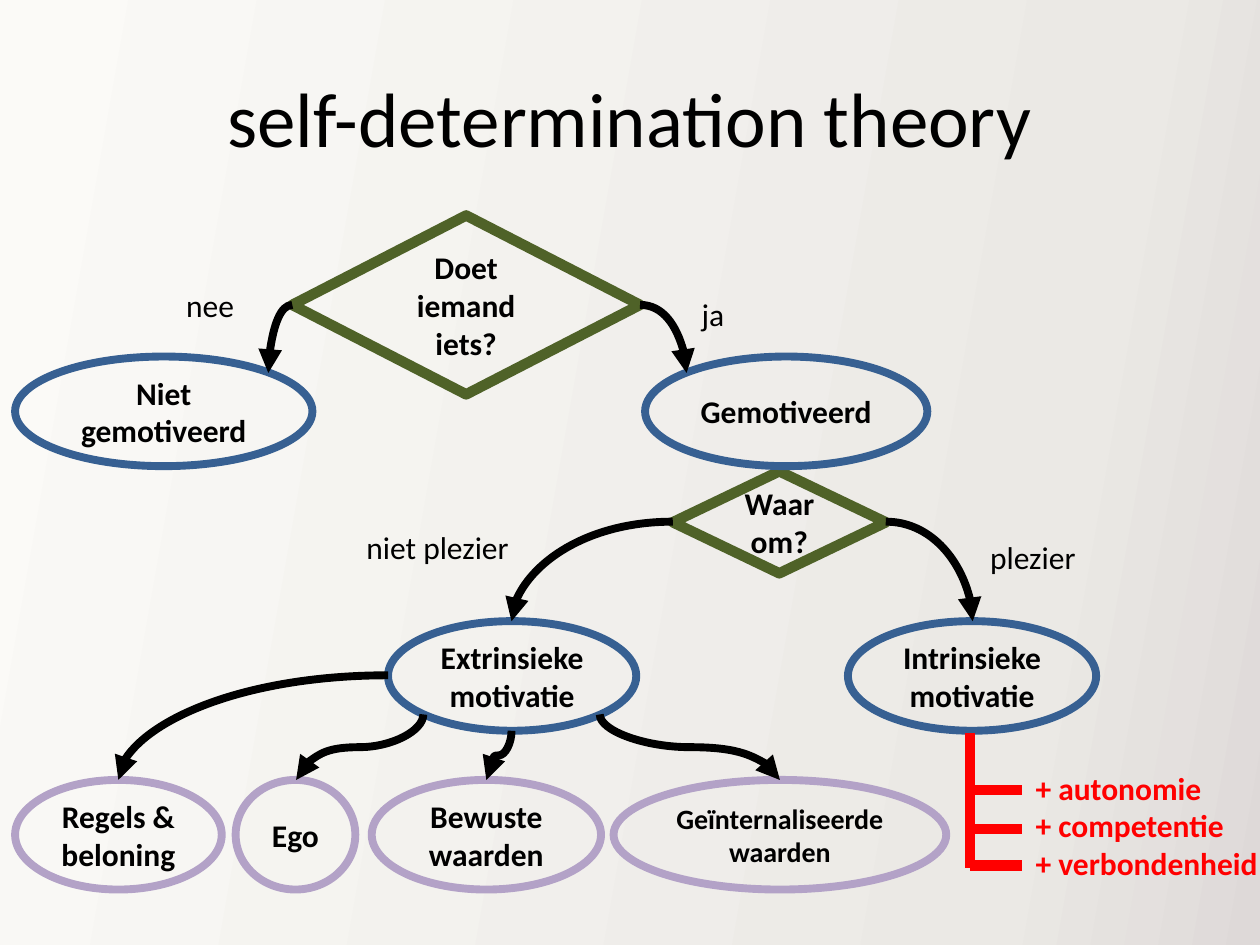
from lxml import etree
from pptx import Presentation
from pptx import util as u
from pptx.dml.color import RGBColor
from pptx.enum import shapes, text
from pptx.oxml import parse_xml
from pptx.oxml.ns import nsdecls, qn

BLACK, RED = "000000", "FF0000"
GREEN, BLUE, LILAC = "4F6228", "376092", "B3A2C7"
KIND = shapes.MSO_SHAPE
LINK = shapes.MSO_CONNECTOR


def paint(code):
    return RGBColor.from_string(code)


def write(frame, words, size=18, bold=False, color=BLACK,
          align=text.PP_ALIGN.LEFT, anchor=text.MSO_ANCHOR.TOP):
    frame.word_wrap = True
    frame.vertical_anchor = anchor
    frame.text = words
    for para in frame.paragraphs:
        para.alignment = align
        font = para.runs[0].font
        font.name, font.size, font.bold = "Calibri", u.Pt(size), bold
        font.color.rgb = paint(color)


class Chart:
    """Flow chart style and the slide it is drawn on."""
    centre = dict(align=text.PP_ALIGN.CENTER, anchor=text.MSO_ANCHOR.MIDDLE)

    def __init__(self, slide):
        self.items = slide.shapes

    def back(self, stops, angle):
        box = self.items.add_shape(KIND.RECTANGLE, 0, 0, u.Inches(10), u.Inches(7.5))
        box.shadow.inherit = False
        box.line.fill.background()
        marks = "".join(f'<a:gs pos="{pos * 1000}"><a:srgbClr val="{code}"/></a:gs>'
                        for pos, code in stops)
        grad = parse_xml(f'<a:gradFill {nsdecls("a")} rotWithShape="1"><a:gsLst>{marks}'
                         f'</a:gsLst><a:lin ang="{angle * 60000}" scaled="0"/></a:gradFill>')
        box._element.spPr.find(qn("a:prstGeom")).addnext(grad)

    def label(self, words, x, y, w, h, **form):
        box = self.items.add_textbox(*map(u.Inches, (x, y, w, h)))
        write(box.text_frame, words, **form)

    def node(self, kind, words, x, y, w, h, color, width, size=18):
        box = self.items.add_shape(kind, *map(u.Inches, (x, y, w, h)))
        box.shadow.inherit = False
        box.fill.background()
        box.line.color.rgb = paint(color)
        box.line.width = u.Pt(width)
        write(box.text_frame, words, size=size, bold=True, **self.centre)

    def ask(self, words, *place):
        self.node(KIND.DIAMOND, words, *place, GREEN, 6)

    def oval(self, words, x, y, w, color=BLUE, size=18):
        self.node(KIND.OVAL, words, x, y, w, 0.87, color, 4.5, size)

    def line(self, x1, y1, x2, y2, kind=LINK.STRAIGHT, color=RED, width=6):
        link = self.items.add_connector(kind, *map(u.Inches, (x1, y1, x2, y2)))
        link.line.color.rgb = paint(color)
        link.line.width = u.Pt(width)
        etree.SubElement(link._element.spPr, qn("a:effectLst"))
        return link

    def curve(self, *ends):
        link = self.line(*ends, kind=LINK.CURVE, color=BLACK, width=4.5)
        etree.SubElement(link.line._get_or_add_ln(), qn("a:tailEnd"), type="triangle")
        return link._element.spPr

    def bend(self, *ends):
        """Quarter curve that leaves sideways and arrives from above."""
        self.curve(*ends).find(qn("a:prstGeom")).set("prst", "curvedConnector2")

    def wave(self, x1, y1, x2, y2):
        """S-curve that leaves and arrives vertically: a turned connector."""
        mid, level = (x1 + x2) / 2, (y1 + y2) / 2
        long, wide = (y2 - y1) / 2, abs(x2 - x1) / 2
        side = 1 if x2 < x1 else -1
        props = self.curve(mid - side * long, level - wide,
                           mid + side * long, level + wide)
        turn = 90 if side > 0 else 270
        props.find(qn("a:xfrm")).set("rot", str(turn * 60000))


def main():
    deck = Presentation()
    deck.slide_width, deck.slide_height = u.Inches(10), u.Inches(7.5)
    chart = Chart(deck.slides.add_slide(deck.slide_layouts[6]))

    # Background and title
    chart.back([(0, "FBFAF7"), (81, "EBE9E5"), (100, "DED9D8")], 10)
    chart.label("self-determination theory", 0.5, 0.3, 9, 1.25, size=44, **chart.centre)

    # Questions and states
    chart.ask("Waarom?", 5.34, 3.74, 1.69, 0.81)
    chart.oval("Niet gemotiveerd", 0.12, 2.83, 2.36)
    chart.oval("Gemotiveerd", 5.12, 2.83, 2.24)
    chart.ask("Doet iemand iets?", 2.32, 1.71, 2.76, 1.42)
    chart.oval("Extrinsieke motivatie", 3.08, 4.93, 1.97)
    chart.oval("Intrinsieke motivatie", 6.73, 4.93, 1.97)

    # Kinds of extrinsic motivation
    for words, x, w, size in [("Regels & beloning", 0.12, 1.64, 18),
                              ("Ego", 1.87, 0.95, 18),
                              ("Bewuste waarden", 2.95, 1.82, 18),
                              ("Geïnternaliseerde waarden", 4.87, 2.64, 16)]:
        chart.oval(words, x, 6.19, w, LILAC, size)

    # Arrows
    for ends in [(2.32, 2.42, 2.13, 2.96), (5.08, 2.42, 5.45, 2.96),
                 (5.34, 4.14, 4.06, 4.93), (7.03, 4.14, 7.72, 4.93),
                 (3.08, 5.36, 0.94, 6.19)]:
        chart.bend(*ends)
    for x1, y1, x2 in [(3.36, 5.67, 2.35), (4.06, 5.8, 3.86), (4.76, 5.67, 6.19)]:
        chart.wave(x1, y1, x2, 6.19)

    # Answers beside the arrows
    for words, x, y, w in [("nee", 1.38, 2.22, 0.64), ("ja", 5.47, 2.29, 0.89),
                           ("niet plezier", 2.81, 4.14, 1.48),
                           ("plezier", 7.76, 4.22, 1.48)]:
        chart.label(words, x, y, w, 0.4)

    # Needs behind intrinsic motivation
    chart.label("+ autonomie\n+ competentie\n+ verbondenheid",
                8.12, 6.05, 2.08, 1.01, bold=True, color=RED)
    chart.line(7.7, 5.82, 7.7, 6.89)
    for y in (6.87, 6.58, 6.27):
        chart.line(8.11, y, 7.7, y)

    deck.save("out.pptx")


if __name__ == "__main__":
    main()
